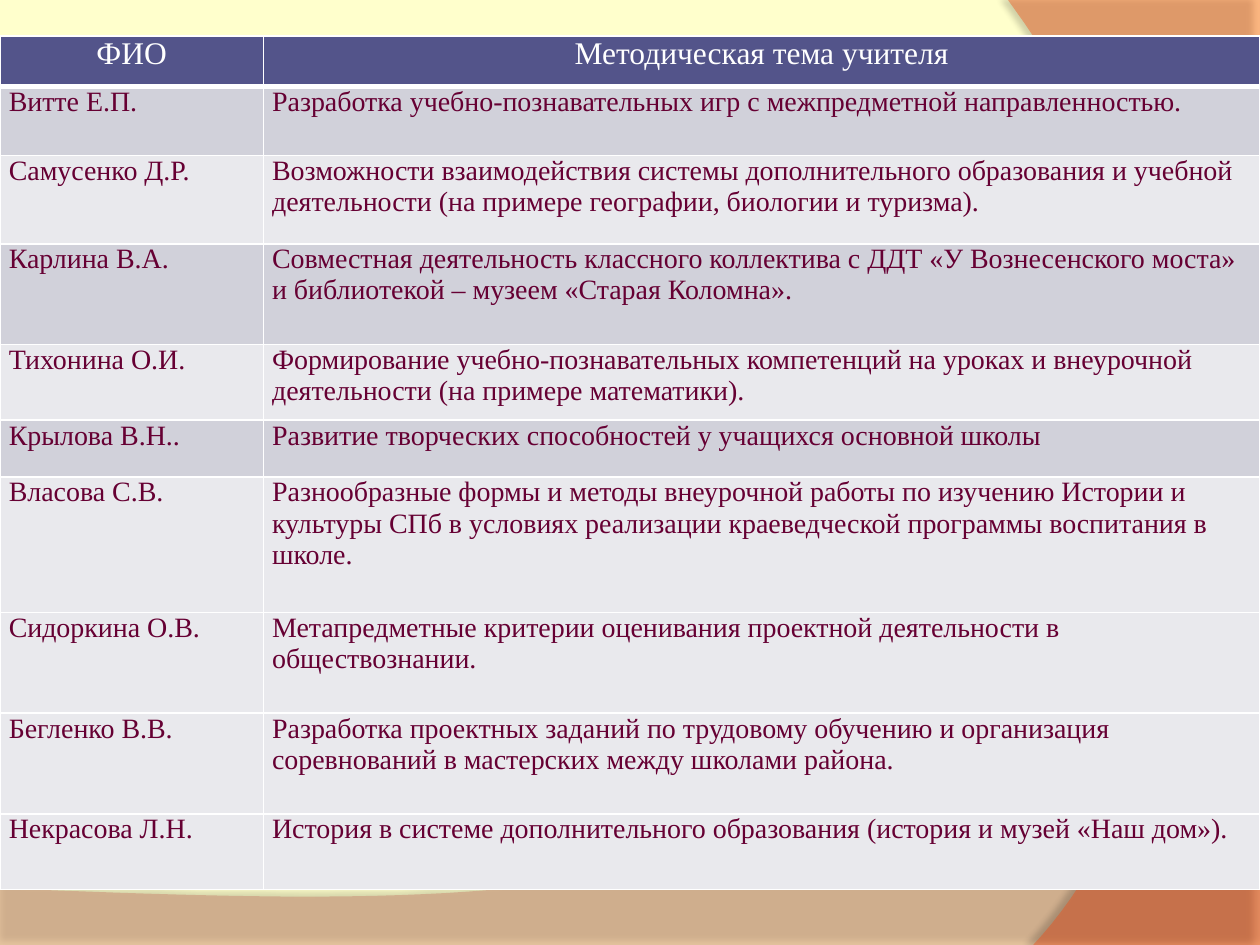
from dataclasses import dataclass
from lxml.etree import SubElement as Sub
from pptx import Presentation as Deck
from pptx.dml.color import RGBColor as Rgb
from pptx.enum.text import PP_ALIGN as Align
from pptx.oxml.ns import qn
from pptx.util import Inches, Pt


@dataclass(frozen=True)
class Theme:
    back: str = "FFFFCC"
    wave: str = "C77E69"
    side: str = "F4480F"
    head: str = "53548A"
    dark: str = "D1D1DA"
    pale: str = "E9E9ED"
    ink: str = "660033"
    white: str = "FFFFFF"
    font: str = "Times New Roman"
    title: int = 18
    body: int = 16


T = Theme()
W, H = Inches(10), Inches(7.5)
COL, ROW = W / 100, H / 300
TOP = 11.4
SPLIT = (20.9, 79.1)
STEPS = 48

HEAD = (16, T.head, "ФИО", "Методическая тема учителя")
BODY = [
    (22, T.dark, "Витте Е.П.",
     "Разработка учебно-познавательных игр с межпредметной направленностью."),
    (28, T.pale, "Самусенко Д.Р.",
     "Возможности взаимодействия системы дополнительного образования и учебной "
     "деятельности (на примере географии, биологии и туризма)."),
    (32, T.dark, "Карлина В.А.",
     "Совместная деятельность классного коллектива с ДДТ «У Вознесенского моста» "
     "и библиотекой – музеем «Старая Коломна»."),
    (24, T.pale, "Тихонина О.И.",
     "Формирование учебно-познавательных компетенций на уроках и внеурочной "
     "деятельности (на примере математики)."),
    (18, T.dark, "Крылова В.Н..",
     "Развитие творческих способностей у учащихся основной школы"),
    (43, T.pale, "Власова С.В.",
     "Разнообразные формы и методы внеурочной работы по изучению Истории и "
     "культуры СПб в условиях реализации краеведческой программы воспитания в школе."),
    (32, T.pale, "Сидоркина О.В.",
     "Метапредметные критерии оценивания проектной деятельности в обществознании."),
    (32, T.pale, "Бегленко В.В.",
     "Разработка проектных заданий по трудовому обучению и организация "
     "соревнований в мастерских между школами района."),
    (24, T.pale, "Некрасова Л.Н.",
     "История в системе дополнительного образования (история и музей «Наш дом»)."),
]


def tint(node, tag, color, share=None):
    fill = Sub(node, qn(tag))
    rgb = Sub(fill, qn("a:srgbClr"), val=color) if tag == "a:solidFill" else fill
    if share:
        Sub(rgb, qn("a:alpha"), val=str(share * 1000))


def curve(a, b, c, d):
    for i in range(STEPS + 1):
        t = i / STEPS
        u = 1 - t
        yield tuple(u**3 * p + 3 * u * u * t * q + 3 * u * t * t * r + t**3 * s
                    for p, q, r, s in zip(a, b, c, d))


def shade(shape, share, dist, turn):
    shape.shadow.inherit = False
    glow = Sub(shape._element.spPr.find(qn("a:effectLst")), qn("a:outerShdw"),
               blurRad=str(Pt(4)), dist=str(Pt(dist)),
               dir=str(turn * 60000), algn="ctr", rotWithShape="0")
    rgb = Sub(glow, qn("a:srgbClr"), val="000000")
    Sub(rgb, qn("a:alpha"), val=str(share * 1000))


def sheet(slide, dots, color, share, shadow):
    dots = [(round(x * W), round(y * H)) for x, y in dots]
    pen = slide.shapes.build_freeform(*dots[0], scale=1.0)
    pen.add_line_segments(dots[1:], close=True)
    shape = pen.convert_to_shape()
    shape.fill.solid()
    shape.fill.fore_color.rgb = Rgb.from_string(color)
    rgb = shape._element.spPr.find(qn("a:solidFill"))[0]
    Sub(rgb, qn("a:alpha"), val=str(share * 1000))
    shape.line.fill.background()
    shade(shape, *shadow)


def rule(cell, top, base):
    props = cell._tc.get_or_add_tcPr()
    for tag, size in (("lnL", 1), ("lnR", 1), ("lnT", top), ("lnB", base)):
        line = Sub(props, qn("a:" + tag), w=str(Pt(size)))
        tint(line, "a:solidFill", T.white)


def write(cell, text, fill, color, size, align):
    cell.fill.solid()
    cell.fill.fore_color.rgb = Rgb.from_string(fill)
    cell.margin_left = cell.margin_right = Inches(0.07)
    cell.margin_top = cell.margin_bottom = 0
    cell.text = text
    para = cell.text_frame.paragraphs[0]
    para.alignment = align
    para.font.name = T.font
    para.font.size = Pt(size)
    para.font.color.rgb = Rgb.from_string(color)


def roster(slide):
    rows = [HEAD, *BODY]
    high = sum(row[0] for row in rows)
    grid = slide.shapes.add_table(len(rows), len(SPLIT), 0, round(TOP * ROW),
                                  W, round(high * ROW)).table
    for col, share in zip(grid.columns, SPLIT):
        col.width = round(share * COL)
    for i, (tall, fill, *texts) in enumerate(rows):
        grid.rows[i].height = round(tall * ROW)
        style = (T.white, T.title, Align.CENTER) if i == 0 else (T.ink, T.body, Align.LEFT)
        for j, text in enumerate(texts):
            cell = grid.cell(i, j)
            rule(cell, 3 if i == 1 else 1, 3 if i == 0 else 1)
            write(cell, text, fill, *style)


def main():
    deck = Deck()
    deck.slide_width, deck.slide_height = W, H
    slide = deck.slides.add_slide(deck.slide_layouts[6])
    slide.background.fill.solid()
    slide.background.fill.fore_color.rgb = Rgb.from_string(T.back)
    wave = curve((1, 0.69), (0.56, 0.97), (0.39, 0.96), (0, 0.94))
    sheet(slide, [(0, 1), (1, 1), *wave], T.wave, 45, (35, 3.5, 270))
    edge = curve((0.82, 1), (0.94, 0.83), (1.02, 0.4), (0.8, 0))
    sheet(slide, [(1, 0), (1, 1), *edge], T.side, 40, (45, 4, 180))
    roster(slide)
    deck.save("out.pptx")


if __name__ == "__main__":
    main()
